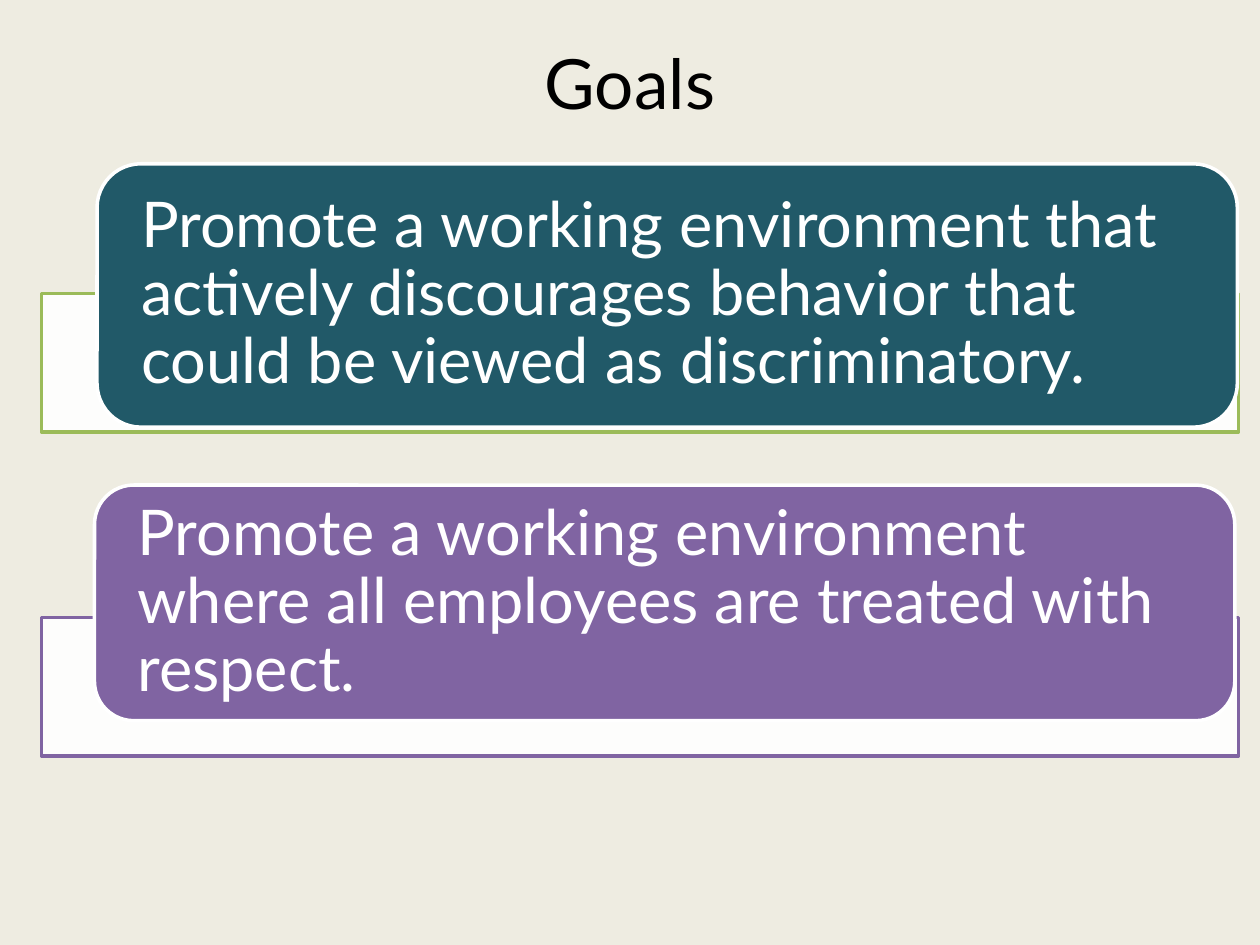
from lxml import etree
from pptx import Presentation
from pptx.dml.color import RGBColor
from pptx.enum.shapes import MSO_SHAPE
from pptx.enum.text import MSO_ANCHOR, PP_ALIGN
from pptx.oxml.ns import qn
from pptx.util import Inches, Pt

RECTANGLE, ROUNDED = MSO_SHAPE.RECTANGLE, MSO_SHAPE.ROUNDED_RECTANGLE
MIDDLE = MSO_ANCHOR.MIDDLE
LEFT, CENTER = PP_ALIGN.LEFT, PP_ALIGN.CENTER

BEIGE = RGBColor(0xEE, 0xEC, 0xE1)
BLACK = RGBColor(0x00, 0x00, 0x00)
WHITE = RGBColor(0xFF, 0xFF, 0xFF)
GREEN = RGBColor(0x9B, 0xBB, 0x59)
TEAL = RGBColor(0x21, 0x59, 0x68)
PURPLE = RGBColor(0x80, 0x64, 0xA2)

FONT = "Lato"
TITLE = "Goals"
# text, label fill, frame line, label left, label top, label height
GOALS = [
    ("Promote a working environment that actively discourages behavior "
     "that could be viewed as discriminatory.", TEAL, GREEN, 0.77, 1.3, 2.09),
    ("Promote a working environment where all employees are treated "
     "with respect.", PURPLE, PURPLE, 0.75, 3.85, 1.87),
]
FRAME_LEFT, FRAME_TOP, FRAME_WIDTH, FRAME_HEIGHT = 0.33, 2.33, 9.5, 1.1
FRAME_PITCH = 2.57
LABEL_WIDTH = 9.05


def add_box(slide, preset, place, fill, line):
    box = slide.shapes.add_shape(preset, *map(Inches, place))
    box.shadow.inherit = False
    box.fill.solid()
    box.fill.fore_color.rgb = fill
    box.line.color.rgb = line
    box.line.width = Pt(2)
    return box


def set_opacity(box, percent):
    color = box.fill._xPr.find(qn("a:solidFill"))[0]
    etree.SubElement(color, qn("a:alpha"), val=str(percent * 1000))


def write(box, text, size, color, align, side_inset):
    frame = box.text_frame
    frame.word_wrap = True
    frame.vertical_anchor = MIDDLE
    frame.margin_left = frame.margin_right = Inches(side_inset)
    frame.margin_top = frame.margin_bottom = 0
    frame.text = text
    paragraph = frame.paragraphs[0]
    paragraph.alignment = align
    font = paragraph.runs[0].font
    font.name, font.size = FONT, Pt(size)
    font.color.rgb = color
    return paragraph


def main():
    prs = Presentation()
    prs.slide_width, prs.slide_height = Inches(10), Inches(7.5)
    slide = prs.slides.add_slide(prs.slide_layouts[6])
    slide.background.fill.solid()
    slide.background.fill.fore_color.rgb = BEIGE

    title = slide.shapes.add_textbox(*map(Inches, (0.5, 0.3, 9, 0.7)))
    write(title, TITLE, 39.6, BLACK, CENTER, 0.1)

    for row, (text, fill, line, left, top, height) in enumerate(GOALS):
        frame_top = FRAME_TOP + row * FRAME_PITCH
        frame = add_box(slide, RECTANGLE,
                        (FRAME_LEFT, frame_top, FRAME_WIDTH, FRAME_HEIGHT),
                        WHITE, line)
        set_opacity(frame, 90)
        label = add_box(slide, ROUNDED, (left, top, LABEL_WIDTH, height),
                        fill, WHITE)
        paragraph = write(label, text, 36, WHITE, LEFT, 0.25)
        paragraph.line_spacing = 0.9
        paragraph.space_after = Pt(12.6)

    prs.save("out.pptx")


if __name__ == "__main__":
    main()
